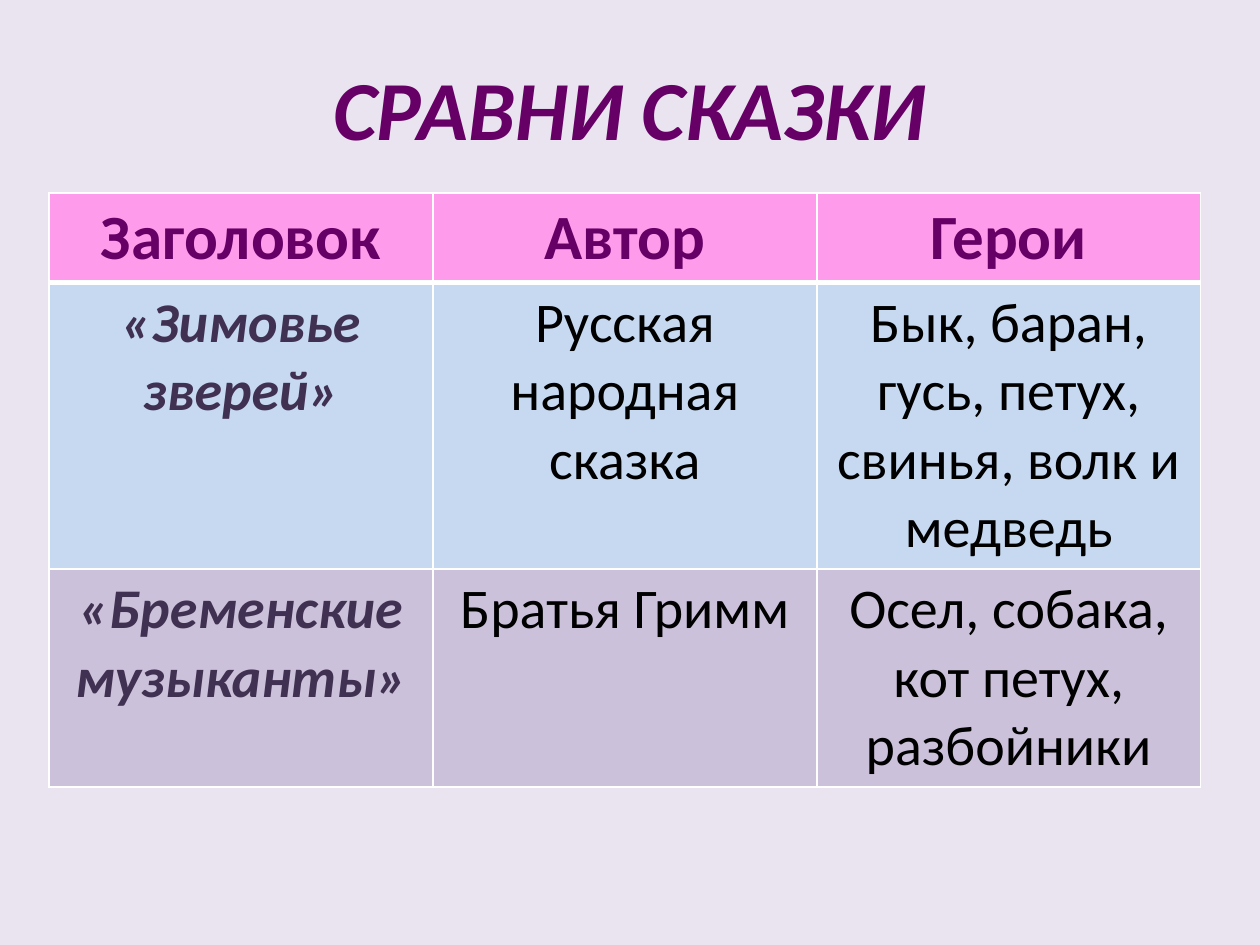
from dataclasses import dataclass

import pptx
import pptx.dml.color
import pptx.enum.text
import pptx.oxml
import pptx.oxml.ns
import pptx.table
import pptx.text.text
import pptx.util
from pptx.util import Inches


@dataclass(frozen=True)
class Theme:
    font: str = "Calibri"
    background: str = "E9E4EF"
    plum: str = "660066"
    violet: str = "403152"
    black: str = "000000"
    pink: str = "FE9CEB"
    blue: str = "C6D9F1"
    lilac: str = "CCC1DA"
    border: str = "FFFFFF"
    title_size: int = 48
    header_size: int = 36
    body_size: int = 32
    thin: int = 1
    thick: int = 3


@dataclass(frozen=True)
class TextStyle:
    size: int
    color: str
    bold: bool = False
    italic: bool = False


@dataclass(frozen=True)
class TableRow:
    texts: tuple[str, str, str]
    fill: str
    height: float
    styles: tuple[TextStyle, TextStyle, TextStyle]
    top: int
    bottom: int


THEME = Theme()
TITLE = TextStyle(THEME.title_size, THEME.plum, True, True)
HEADER = TextStyle(THEME.header_size, THEME.plum, True)
TALE = TextStyle(THEME.body_size, THEME.violet, True, True)
BODY = TextStyle(THEME.body_size, THEME.black)

ROWS = (
    TableRow(("Заголовок", "Автор", "Герои"), THEME.pink, 0.7,
             (HEADER, HEADER, HEADER), THEME.thin, THEME.thick),
    TableRow(("«Зимовье зверей»", "Русская народная сказка",
              "Бык, баран, гусь, петух, свинья, волк и медведь"),
             THEME.blue, 2.23, (TALE, BODY, BODY), THEME.thick, THEME.thin),
    TableRow(("«Бременские музыканты»", "Братья Гримм",
              "Осел, собака, кот петух, разбойники"),
             THEME.lilac, 1.7, (TALE, BODY, BODY), THEME.thin, THEME.thin),
)


def rgb(color: str) -> pptx.dml.color.RGBColor:
    return pptx.dml.color.RGBColor.from_string(color)


def write_text(tf: pptx.text.text.TextFrame, text: str, style: TextStyle) -> None:
    p = tf.paragraphs[0]
    p.alignment = pptx.enum.text.PP_ALIGN.CENTER
    r = p.add_run()
    r.text = text
    r.font.name = THEME.font
    r.font.size = pptx.util.Pt(style.size)
    r.font.bold = style.bold
    r.font.italic = style.italic
    r.font.color.rgb = rgb(style.color)


def add_border(cell: pptx.table._Cell, side: str, width: int) -> None:
    line = pptx.oxml.parse_xml(
        f'<a:ln{side} {pptx.oxml.ns.nsdecls("a")} w="{pptx.util.Pt(width)}">'
        f'<a:solidFill><a:srgbClr val="{THEME.border}"/></a:solidFill></a:ln{side}>'
    )
    cell._tc.get_or_add_tcPr().append(line)


def fill_row(table: pptx.table.Table, index: int, row: TableRow) -> None:
    table.rows[index].height = Inches(row.height)
    widths = {"L": THEME.thin, "R": THEME.thin, "T": row.top, "B": row.bottom}
    for cell, text, style in zip(table.rows[index].cells, row.texts, row.styles):
        for side, width in widths.items():
            add_border(cell, side, width)
        cell.fill.solid()
        cell.fill.fore_color.rgb = rgb(row.fill)
        write_text(cell.text_frame, text, style)


def main() -> None:
    prs = pptx.Presentation()
    prs.slide_width, prs.slide_height = Inches(10), Inches(7.5)
    s = prs.slides.add_slide(prs.slide_layouts[5])
    s.background.fill.solid()
    s.background.fill.fore_color.rgb = rgb(THEME.background)

    title = s.shapes.title
    title.left, title.top = Inches(1.56), Inches(0.39)
    title.width, title.height = Inches(6.88), Inches(0.91)
    write_text(title.text_frame, "СРАВНИ СКАЗКИ", TITLE)

    columns = len(ROWS[0].texts)
    height = sum(row.height for row in ROWS)
    table = s.shapes.add_table(len(ROWS), columns, Inches(0.39), Inches(1.53),
                               Inches(9.14), Inches(height)).table
    for index, row in enumerate(ROWS):
        fill_row(table, index, row)

    prs.save("out.pptx")


if __name__ == "__main__":
    main()
